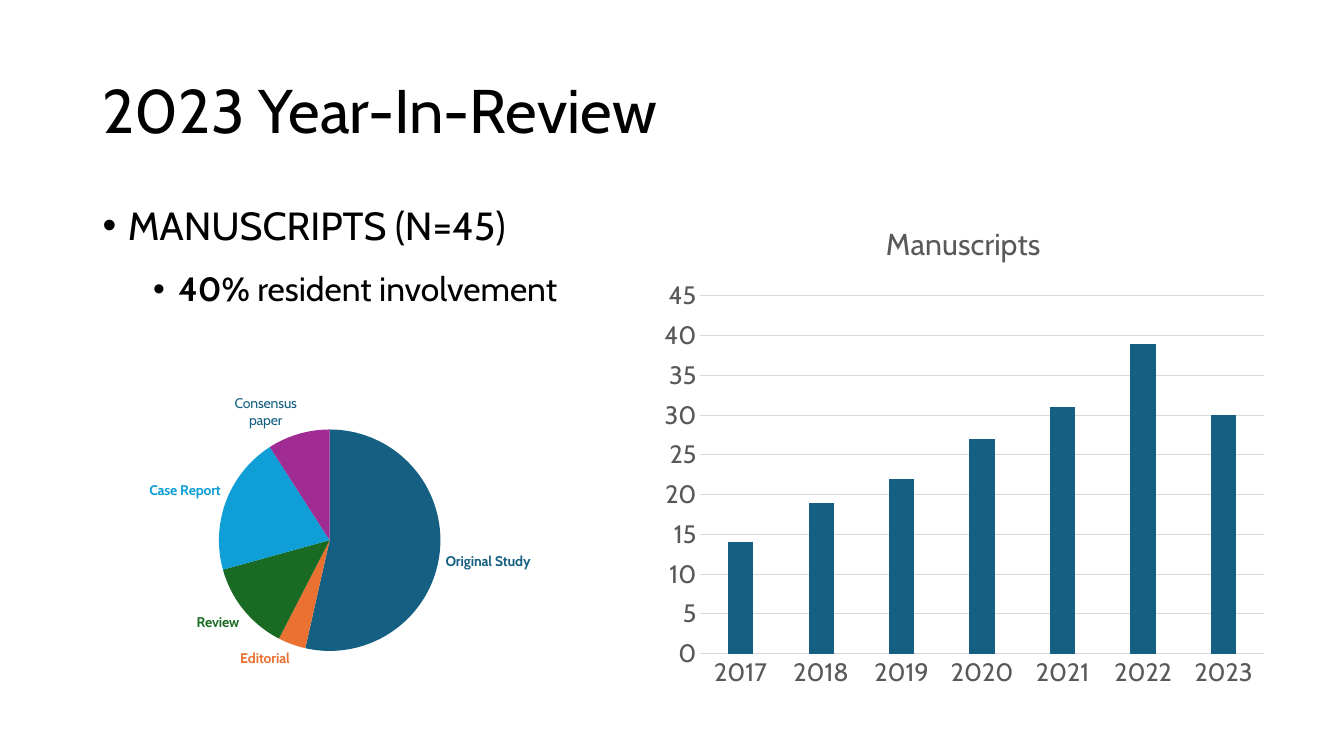
"""Build the 2023 year-in-review slide with a manuscript column chart and a type pie chart."""
from lxml.etree import SubElement
from pptx import Presentation
from pptx.chart.data import CategoryChartData
from pptx.dml.color import RGBColor
from pptx.enum.chart import XL_CHART_TYPE, XL_LABEL_POSITION, XL_TICK_MARK
from pptx.enum.text import MSO_ANCHOR
from pptx.oxml import parse_xml
from pptx.oxml.ns import nsdecls, qn
from pptx.util import Inches, Pt

COLORS = {
    "black": "000000", "gray": "595959", "grid": "D9D9D9", "blue": "156082",
    "orange": "E97132", "green": "196B24", "sky": "0F9ED5", "purple": "A02B93",
}


def style(font, size, color, bold=False):
    font.name = "Cabin"
    font.size = Pt(size)
    font.bold = bold
    font.color.rgb = RGBColor.from_string(COLORS[color])


def manual_layout(inner, **fractions):
    target = '<c:layoutTarget val="inner"/>' if inner else ""
    modes = "".join(f'<c:{axis}Mode val="edge"/>' for axis in "xy")
    values = "".join(f'<c:{key} val="{value}"/>' for key, value in fractions.items())
    return parse_xml(f'<c:layout {nsdecls("c")}><c:manualLayout>{target}{modes}{values}'
                     "</c:manualLayout></c:layout>")


deck = Presentation()
deck.slide_width, deck.slide_height = Inches(13.33), Inches(7.5)
page = deck.slides.add_slide(deck.slide_layouts[6])

title_box = page.shapes.add_textbox(Inches(0.92), Inches(0.4), Inches(11.5), Inches(1.45))
title_box.text_frame.word_wrap = True
title_box.text_frame.vertical_anchor = MSO_ANCHOR.MIDDLE
title_box.text_frame.text = "2023 Year-In-Review"
title_para = title_box.text_frame.paragraphs[0]
title_para.line_spacing = 0.9
style(title_para.runs[0].font, 44, "black")

body_box = page.shapes.add_textbox(Inches(0.92), Inches(2), Inches(11.5), Inches(4.76))
body = body_box.text_frame
body.word_wrap = True
bullets = [
    (0, 0.25, 28, 10, 12, [("MANUSCRIPTS (N=45)", False)]),
    (1, 0.75, 24, 5, 0, [("40% ", True), ("resident involvement", False)]),
]
for level, indent, size, before, after, spans in bullets:
    para = body.add_paragraph() if level else body.paragraphs[0]
    para.level = level
    para.line_spacing = 0.9
    para.space_before, para.space_after = Pt(before), Pt(after)
    for words, bold in spans:
        span = para.add_run()
        span.text = words
        style(span.font, size, "black", bold)
    properties = para._p.get_or_add_pPr()
    properties.set("marL", str(Inches(indent)))
    properties.set("indent", str(Inches(-0.25)))
    SubElement(properties, qn("a:buFont")).set("typeface", "Arial")
    SubElement(properties, qn("a:buChar")).set("char", "•")

yearly = CategoryChartData()
yearly.categories = [str(year) for year in range(2017, 2024)]
yearly.add_series("Series 1", [14, 19, 22, 27, 31, 39, 30])
columns = page.shapes.add_chart(XL_CHART_TYPE.COLUMN_CLUSTERED, Inches(6.45), Inches(2),
                                Inches(6.21), Inches(4.93), yearly).chart
style(columns.font, 18, "black")
columns.has_legend = False
columns.has_title = True
columns.chart_title.text_frame.text = "Manuscripts"
style(columns.chart_title.text_frame.paragraphs[0].runs[0].font, 21.6, "gray")
columns.chart_title.include_in_layout = False
columns.chart_title._element.find(qn("c:tx")).addnext(manual_layout(False, x=0.37, y=0.05))
column_plot = columns.plots[0]
column_plot.vary_by_categories = False
column_plot.gap_width, column_plot.overlap = 219, -27
column_fill = column_plot.series[0].format.fill
column_fill.solid()
column_fill.fore_color.rgb = RGBColor.from_string(COLORS["blue"])
value_axis, year_axis = columns.value_axis, columns.category_axis
for axis in (value_axis, year_axis):
    style(axis.tick_labels.font, 18, "gray")
    axis.major_tick_mark = axis.minor_tick_mark = XL_TICK_MARK.NONE
value_axis.minimum_scale, value_axis.maximum_scale, value_axis.major_unit = 0, 45, 5
value_axis.has_major_gridlines = True
value_axis.format.line.fill.background()
for line in (value_axis.major_gridlines.format.line, year_axis.format.line):
    line.color.rgb = RGBColor.from_string(COLORS["grid"])
    line.width = Pt(0.75)

slices = [
    ("Original Study", 53, "blue"), ("Editorial", 4, "orange"), ("Review", 13, "green"),
    ("Case Report", 20, "sky"), ("Consensus", 9, "purple"),
]
types = CategoryChartData()
types.categories = [name for name, share, color in slices]
types.add_series("Series 1", [share for name, share, color in slices])
pie = page.shapes.add_chart(XL_CHART_TYPE.PIE, Inches(0.67), Inches(3.75),
                            Inches(5), Inches(3.01), types).chart
style(pie.font, 10, "black")
pie.has_legend = False
pie.has_title = False
pie_series = pie.plots[0].series[0]
labels = pie_series.data_labels
labels.show_category_name, labels.show_value = True, False
labels.position = XL_LABEL_POSITION.OUTSIDE_END
for index, (name, share, color) in enumerate(slices):
    point = pie_series.points[index]
    point.format.fill.solid()
    point.format.fill.fore_color.rgb = RGBColor.from_string(COLORS[color])
    label = point.data_label
    if name == "Consensus":
        label.text_frame.text = "Consensus\npaper"
        for para in label.text_frame.paragraphs:
            style(para.runs[0].font, 10, "blue")
    else:
        style(label.font, 10, color, True)
    label.position = XL_LABEL_POSITION.OUTSIDE_END
for label_xml in labels._element.findall(qn("c:dLbl")):
    label_xml.find(qn("c:showVal")).set("val", "0")
    label_xml.find(qn("c:showCatName")).set("val", "1")

plot_areas = [(columns, dict(x=0.08, y=0.19, w=0.9, h=0.72)),
              (pie, dict(x=0.3, y=0.17, w=0.44, h=0.73))]
for chart, fractions in plot_areas:
    plot_area = chart._chartSpace.chart.plotArea
    for layout in plot_area.findall(qn("c:layout")):
        plot_area.remove(layout)
    plot_area.insert(0, manual_layout(True, **fractions))

deck.save("out.pptx")
